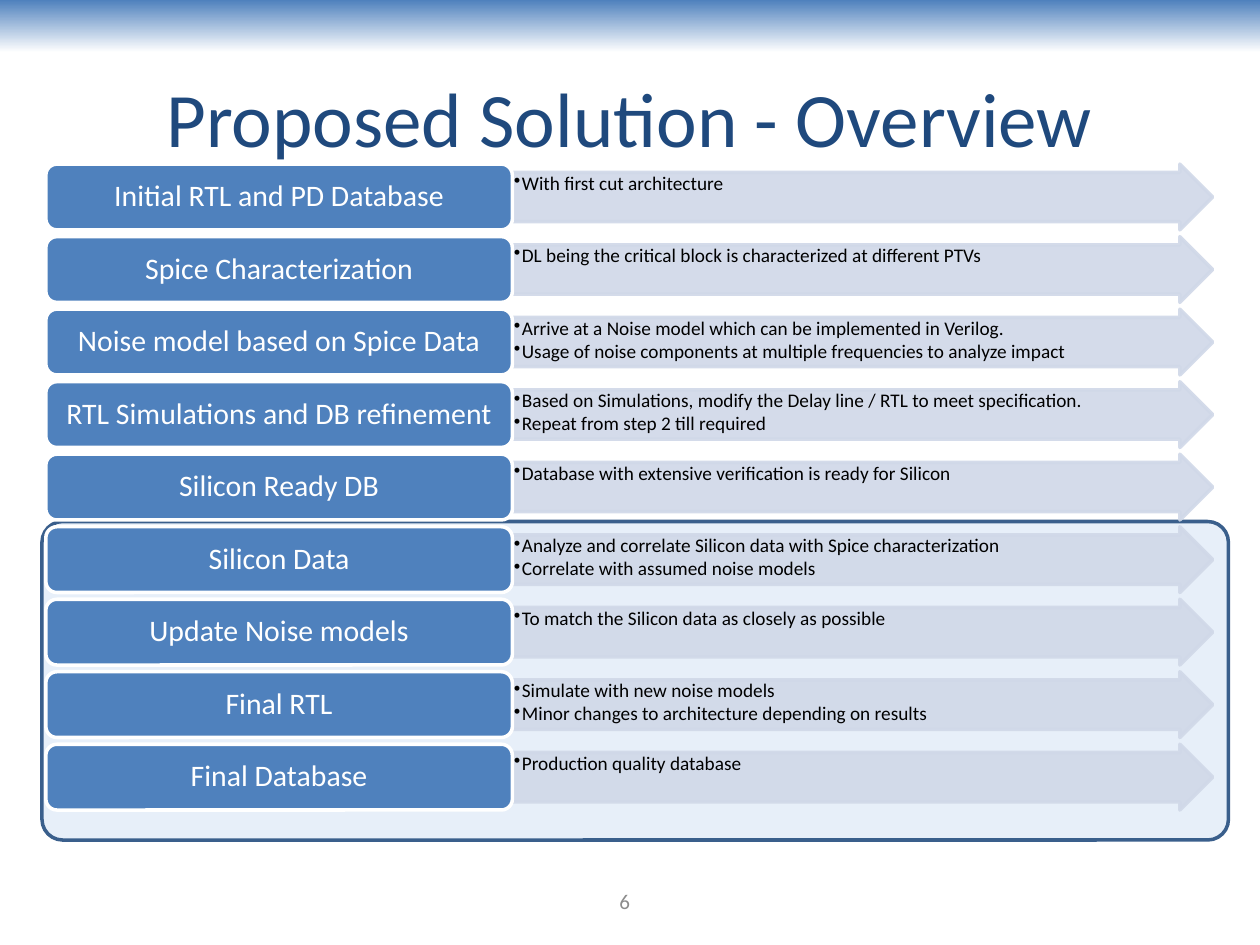
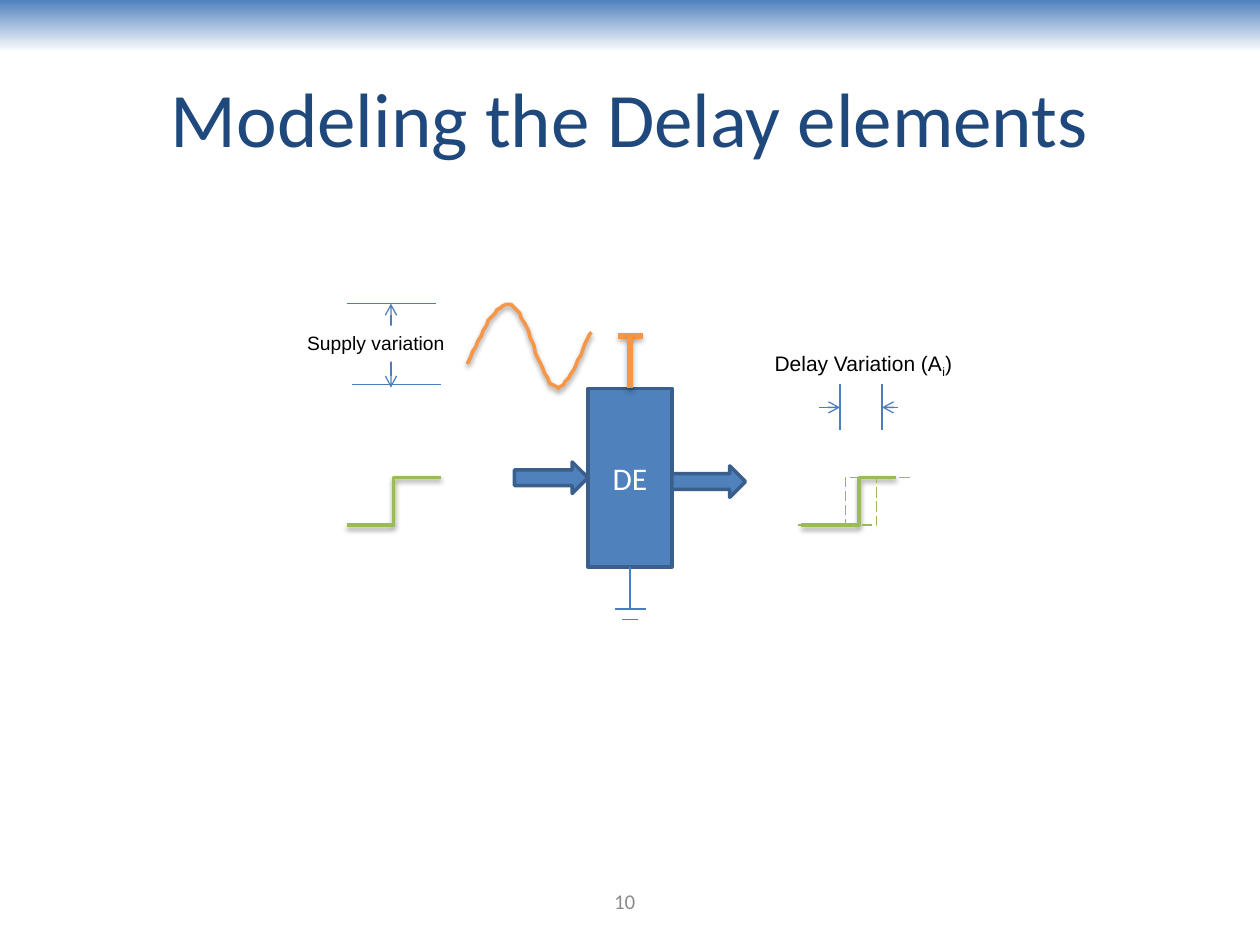
import pptx
import pptx.util
import pptx.dml.color
import pptx.enum.dml
import pptx.enum.shapes
import pptx.enum.text
import pptx.oxml
import pptx.oxml.ns
from lxml import etree

Pt = pptx.util.Pt
KIND = pptx.enum.shapes.MSO_SHAPE
LINK = pptx.enum.shapes.MSO_CONNECTOR
ALIGN = pptx.enum.text.PP_ALIGN
ANCHOR = pptx.enum.text.MSO_ANCHOR
DASH = pptx.enum.dml.MSO_LINE.LONG_DASH

# Shared colours
BLUE, EDGE, WIRE = "4F81BD", "3A5F8C", "4B7EBC"
NAVY, GREY, PALE, MIST = "1F497D", "8C8C8C", "D0D8E8", "E7EFF9"
ORANGE, GREEN, LEAF = "F79646", "9BBB59", "98B955"
WHITE, BLACK = "FFFFFF", "000000"

# Shared text formats
TITLE = dict(size=Pt(44), name="Calibri", color=NAVY)
FOOT = dict(size=Pt(12), name="Calibri", color=GREY)
LABEL = dict(size=Pt(17), name="Calibri", color=WHITE)
NOTE = dict(size=Pt(11), name="Calibri", color=BLACK)
BLOCK = dict(size=Pt(18), name="Calibri", color=WHITE)
SUPPLY = dict(size=Pt(11), name="Arial", color=BLACK)
DELAY = dict(size=Pt(12), name="Arial", color=BLACK)

STEPS = [
    ("Initial RTL and PD Database", ["With first cut architecture"]),
    ("Spice Characterization",
     ["DL being the critical block is characterized at different PTVs"]),
    ("Noise model based on Spice Data",
     ["Arrive at a Noise model which can be implemented in Verilog.",
      "Usage of noise components at multiple frequencies to analyze impact"]),
    ("RTL Simulations and DB refinement",
     ["Based on Simulations, modify the Delay line / RTL to meet specification.",
      "Repeat from step 2 till required"]),
    ("Silicon Ready DB",
     ["Database with extensive verification is ready for Silicon"]),
    ("Silicon Data",
     ["Analyze and correlate Silicon data with Spice characterization",
      "Correlate with assumed noise models"]),
    ("Update Noise models", ["To match the Silicon data as closely as possible"]),
    ("Final RTL",
     ["Simulate with new noise models",
      "Minor changes to architecture depending on results"]),
    ("Final Database", ["Production quality database"]),
]


def paint(target, color, alpha=None):
    """Give a colour object a hex colour, with opacity in percent."""
    target.rgb = pptx.dml.color.RGBColor.from_string(color)
    if alpha:
        add(target._color._xClr, "alpha", val=alpha * 1000)


def add(parent, tag, **values):
    node = etree.SubElement(parent, pptx.oxml.ns.qn("a:" + tag))
    for key, value in values.items():
        node.set(key, str(value))
    return node


def stroke(line, color, width, alpha=None, dash=None):
    line.fill.solid()
    paint(line.fill.fore_color, color, alpha)
    line.width = Pt(width)
    if dash:
        line.dash_style = dash


def shade(item, alpha=None):
    """Clear the theme shadow, or set a soft one below the item."""
    props = item._element.spPr
    for old in props.findall(pptx.oxml.ns.qn("a:effectLst")):
        props.remove(old)
    effects = add(props, "effectLst")
    if alpha:
        cast = add(effects, "outerShdw", blurRad=Pt(3.1), dist=Pt(1.7),
                   dir=5400000, rotWithShape=0)
        add(add(cast, "srgbClr", val=BLACK), "alpha", val=alpha * 1000)


def write(par, text, style):
    run = par.add_run()
    run.text = text
    for key, value in style.items():
        if key == "color":
            paint(run.font.color, value)
        else:
            setattr(run.font, key, value)
    return run


def fit(frame, pad=(7.2, 3.6), wrap=True, anchor=ANCHOR.MIDDLE):
    wide, high = Pt(pad[0]), Pt(pad[1])
    values = dict(word_wrap=wrap, vertical_anchor=anchor, margin_left=wide,
                  margin_right=wide, margin_top=high, margin_bottom=high)
    for key, value in values.items():
        setattr(frame, key, value)
    par = frame.paragraphs[0]
    par.alignment = ALIGN.CENTER
    return par


def label(slide, box, text, style, **options):
    item = slide.shapes.add_textbox(*map(Pt, box))
    par = fit(item.text_frame, **options)
    write(par, text, style)
    return par


def shape(slide, kind, box, fill, edge=None, alpha=None, adjust=()):
    item = slide.shapes.add_shape(kind, *map(Pt, box))
    for index, value in enumerate(adjust):
        item.adjustments[index] = value
    item.fill.solid()
    paint(item.fill.fore_color, fill, alpha)
    if edge:
        stroke(item.line, edge, 2, alpha)
    else:
        item.line.fill.background()
    item.shadow.inherit = False
    return item


def wire(slide, start, end, color=WIRE, width=0.75, kind=LINK.STRAIGHT,
         dash=None, tips=(), bend=None, shadow=None):
    item = slide.shapes.add_connector(kind, *map(Pt, start + end))
    stroke(item.line, color, width, dash=dash)
    for tip in tips:
        add(item.line._get_or_add_ln(), tip, type="arrow")
    if bend:
        guides = item._element.spPr.find(".//" + pptx.oxml.ns.qn("a:avLst"))
        add(guides, "gd", name="adj1", fmla=f"val {round(bend * 100000)}")
    shade(item, shadow)


def step(slide, left, color=GREEN, width=2, **options):
    """A rising signal edge."""
    wire(slide, (left, 300), (left + 54, 273), color, width,
         LINK.ELBOW, **options)


def curve(slide, start, arcs):
    """A wave through cubic arcs, each given by two handles and an end."""
    dots, last, count = [], start, 16
    for one, two, end in arcs:
        for pos in range(1, count + 1):
            t = pos / count
            dots.append(tuple(
                (1 - t) ** 3 * a + 3 * t * (1 - t) ** 2 * b
                + 3 * t * t * (1 - t) * c + t ** 3 * d
                for a, b, c, d in zip(last, one, two, end)))
        last = end
    pen = slide.shapes.build_freeform(*start, scale=Pt(1))
    pen.add_line_segments(dots, close=False)
    item = pen.convert_to_shape()
    item.fill.background()
    stroke(item.line, ORANGE, 2)
    shade(item, 38)


def bullets(slide, box, lines):
    item = slide.shapes.add_textbox(*map(Pt, box))
    frame = item.text_frame
    fit(frame, pad=(0.7, 0.7), anchor=ANCHOR.TOP)
    for index, line in enumerate(lines):
        par = frame.add_paragraph() if index else frame.paragraphs[0]
        props = par._p.get_or_add_pPr()
        props.set("marL", str(Pt(4.5)))
        props.set("indent", str(Pt(-4.5)))
        add(props, "buChar", char="•")
        values = dict(alignment=ALIGN.LEFT, line_spacing=0.9,
                      space_after=Pt(1.3))
        for key, value in values.items():
            setattr(par, key, value)
        write(par, line, NOTE)


def page(deck, title, number):
    """A blank slide with top band, title and page number."""
    slide = deck.slides.add_slide(deck.slide_layouts[6])
    band = shape(slide, KIND.RECTANGLE, (0, 0, 720, 30), BLUE)
    band.fill.gradient()
    band.fill.gradient_angle = 270
    for stop, color in zip(band.fill.gradient_stops, (BLUE, WHITE)):
        paint(stop.color, color)
    label(slide, (36, 21.6, 648, 90), title, TITLE)
    label(slide, (288, 500.4, 138, 28.8), number, FOOT)
    return slide


def flow(slide):
    # Frame around the steps after silicon
    shape(slide, KIND.ROUNDED_RECTANGLE, (24, 298, 678, 182), MIST, EDGE,
          adjust=[0.065])
    # One row for each step
    high, pitch = 37.6, 41.44
    for index, (name, lines) in enumerate(STEPS):
        top = 93.8 + index * pitch
        shape(slide, KIND.RIGHT_ARROW, (293, top, 400, high), PALE, PALE,
              alpha=90, adjust=[0.75, 0.5])
        bullets(slide, (293, top + 4.7, 386, 28.2), lines)
        item = shape(slide, KIND.ROUNDED_RECTANGLE, (26.2, top, 266.6, high),
                     BLUE, WHITE)
        par = fit(item.text_frame, pad=(5, 2.7))
        par.line_spacing = 0.9
        write(par, name, LABEL)


def cell(slide):
    # Delay element with supply and ground
    wire(slide, (353.4, 192), (367.4, 192), ORANGE, 3, shadow=35)
    block = shape(slide, KIND.RECTANGLE, (336, 222, 48, 102), BLUE, EDGE)
    write(fit(block.text_frame), "DE", BLOCK)
    wire(slide, (360, 222), (360, 192), ORANGE, 3, shadow=35)
    wire(slide, (360, 324), (360, 348))
    for y, half in ((348, 9), (354, 4.5)):
        wire(slide, (360.2 - half, y), (360.2 + half, y))

    # Supply noise
    curve(slide, (267, 207.7), [
        ((275, 190), (283.7, 172), (291.9, 174)),
        ((300.2, 176.2), (309.6, 218.6), (317.5, 221.4)),
        ((325, 224), (334, 195), (337.7, 190))])

    # Input edge, then early, nominal and late output edges
    step(slide, 198, shadow=38)
    step(slide, 456, LEAF, 0.75, dash=DASH)
    step(slide, 458, bend=0.611, shadow=38)
    step(slide, 468, GREEN, 0.75, dash=DASH, bend=0.611)
    for left, top in ((294, 264), (384, 266.2)):
        shape(slide, KIND.RIGHT_ARROW, (left, top, 42, 18), BLUE, EDGE)

    # Supply variation span
    wire(slide, (198, 173.5), (249, 173.5))
    wire(slide, (201, 219.6), (252, 219.6))
    wire(slide, (223.4, 173.5), (223.4, 221.5), tips=("headEnd", "tailEnd"))
    shape(slide, KIND.RECTANGLE, (168, 186, 93.6, 20.6), WHITE)
    label(slide, (168, 186, 93.6, 20.6), "Supply variation", SUPPLY,
          wrap=False, anchor=ANCHOR.TOP)

    # Delay variation span
    for x, tail in ((480, 468), (504, 513)):
        wire(slide, (x, 219.6), (x, 246))
        wire(slide, (tail, 232.8), (x, 232.8), tips=("tailEnd",))
    par = label(slide, (435, 196.6, 116.6, 21.6), "Delay Variation (A", DELAY,
                wrap=False, anchor=ANCHOR.TOP)
    low = write(par, "i", DELAY)
    low._r.get_or_add_rPr().set("baseline", "-25000")
    write(par, ")", DELAY)


def main():
    deck = pptx.Presentation()
    deck.slide_width, deck.slide_height = Pt(720), Pt(540)
    flow(page(deck, "Proposed Solution - Overview", "6"))
    cell(page(deck, "Modeling the Delay elements", "10"))
    deck.save("out.pptx")


if __name__ == "__main__":
    main()
